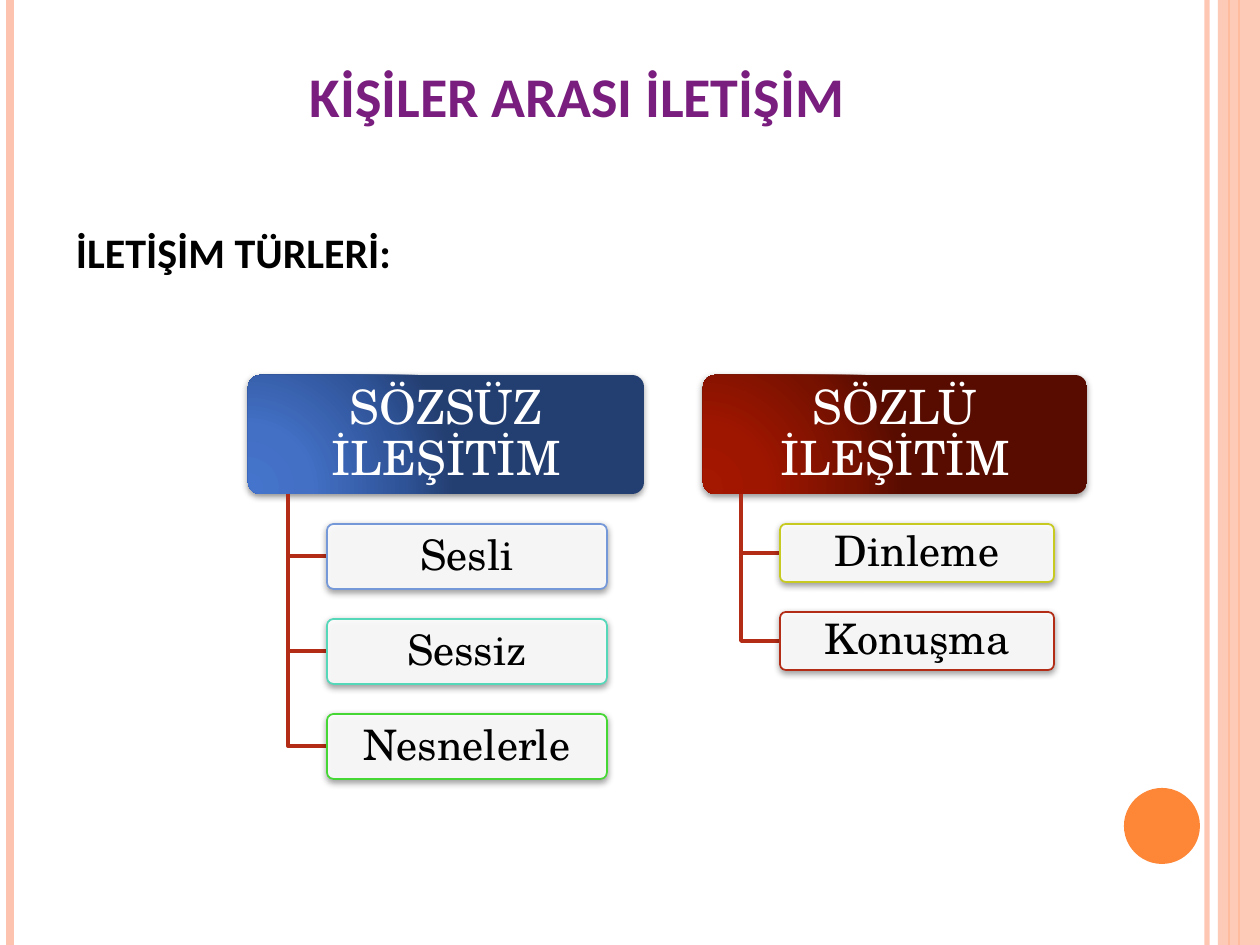
from lxml.etree import SubElement
from pptx import Presentation
from pptx.dml.color import RGBColor
from pptx.enum.shapes import MSO_CONNECTOR, MSO_SHAPE
from pptx.enum.text import MSO_ANCHOR, PP_ALIGN
from pptx.oxml import parse_xml
from pptx.oxml.ns import nsdecls, qn
from pptx.util import Pt

SCALE = 914400 // 126
WIDTH, HEIGHT = 1260, 945

PURPLE = RGBColor(0x79, 0x1D, 0x7E)
BLACK = RGBColor(0, 0, 0)
WHITE = RGBColor(255, 255, 255)
PEACH = RGBColor(0xFE, 0xC3, 0xAE)
ORANGE = RGBColor(0xFE, 0x86, 0x37)
RED = RGBColor(0xB3, 0x2C, 0x16)
PERIWINKLE = RGBColor(0x75, 0x98, 0xD9)
TURQUOISE = RGBColor(0x55, 0xD7, 0xBA)
GREEN = RGBColor(0x45, 0xD8, 0x34)
OLIVE = RGBColor(0xC7, 0xCA, 0x20)

HEADING = "KİŞİLER ARASI İLETİŞİM"
SUBHEADING = "İLETİŞİM TÜRLERİ:"
BRANCHES = [
    {"name": "SÖZSÜZ İLEŞİTİM", "left": 248, "width": 396,
     "leaf_width": 280, "leaf_height": 65,
     "gradient": ("4574CC", "4370C5", "2F5397", "233E70"),
     "leaves": [("Sesli", PERIWINKLE), ("Sessiz", TURQUOISE), ("Nesnelerle", GREEN)]},
    {"name": "SÖZLÜ İLEŞİTİM", "left": 703, "width": 384,
     "leaf_width": 274, "leaf_height": 58,
     "gradient": ("A41700", "9F1600", "771100", "580C00"),
     "leaves": [("Dinleme", OLIVE), ("Konuşma", RED)]},
]
BRANCH_TOP, BRANCH_HEIGHT, GAP = 375, 119, 30
GRADIENT_STOPS = (0, 30, 75, 100)
STRIPES = [(1207, PEACH, 3, 93), (10, PEACH, 4.5, 100),
           (1239, ORANGE, 1.5, 100), (1229, ORANGE, 0.75, 100)]
BAND = (1218, 0, 42, HEIGHT)
DISC = (1124, 788, 76, 76)


def px(*values):
    return [round(value * SCALE) for value in values]


def set_alpha(parent, percent):
    for color in parent.iter(qn("a:srgbClr")):
        SubElement(color, qn("a:alpha"), val=str(percent * 1000))


def write(frame, text, font, margins, anchor, align=None, **spacing):
    frame.text = text
    frame.word_wrap = True
    frame.vertical_anchor = anchor
    for side, margin in zip(("left", "top", "right", "bottom"), margins):
        setattr(frame, "margin_" + side, px(margin)[0])
    paragraph = frame.paragraphs[0]
    paragraph.alignment = align
    for key, value in spacing.items():
        setattr(paragraph, key, value)
    run = paragraph.runs[0]
    run.font.color.rgb = font["color"]
    for key in ("name", "size", "bold"):
        setattr(run.font, key, font[key])
    return paragraph


def fill_placeholder(holder, box, *args, **spacing):
    holder.left, holder.top, holder.width, holder.height = px(*box)
    return write(holder.text_frame, *args, **spacing)


def add_plain(kind, box, color):
    shape = slide.shapes.add_shape(kind, *px(*box))
    shape.shadow.inherit = False
    shape.fill.solid()
    shape.fill.fore_color.rgb = color
    shape.line.fill.background()
    return shape


def add_card(box, text, size, color, margins):
    card = add_plain(MSO_SHAPE.ROUNDED_RECTANGLE, box, WHITE)
    card.adjustments[0] = 0.1
    effects = card._element.spPr.find(qn("a:effectLst"))
    effects.append(parse_xml(
        f'<a:outerShdw {nsdecls("a")} blurRad="{Pt(4)}" dist="{Pt(1.6)}" dir="5400000" '
        'rotWithShape="0"><a:srgbClr val="000000"><a:alpha val="42000"/></a:srgbClr></a:outerShdw>'))
    font = {"name": "TeX Gyre Schola", "size": Pt(size), "bold": False, "color": color}
    write(card.text_frame, text, font, margins, MSO_ANCHOR.MIDDLE, PP_ALIGN.CENTER, line_spacing=0.9)
    return card


def set_radial_gradient(card, colors):
    stops = "".join(f'<a:gs pos="{stop * 1000}"><a:srgbClr val="{color}"/></a:gs>'
                    for stop, color in zip(GRADIENT_STOPS, colors))
    solid = card._element.spPr.find(qn("a:solidFill"))
    solid.getparent().replace(solid, parse_xml(
        f'<a:gradFill {nsdecls("a")} rotWithShape="1"><a:gsLst>{stops}</a:gsLst><a:path path="circle">'
        '<a:fillToRect l="5000" t="100000" r="120000" b="10000"/></a:path></a:gradFill>'))


def add_elbow(x, top, bottom, right):
    builder = slide.shapes.build_freeform(x, top, scale=SCALE)
    builder.add_line_segments([(x, bottom), (right, bottom)], close=False)
    elbow = builder.convert_to_shape()
    elbow.shadow.inherit = False
    elbow.fill.background()
    elbow.line.color.rgb = RED
    elbow.line.width = Pt(2)


presentation = Presentation()
presentation.slide_width, presentation.slide_height = px(WIDTH, HEIGHT)
slide = presentation.slides.add_slide(presentation.slide_layouts[1])
title, body = slide.placeholders

fill_placeholder(title, (63, 38, 1029, 157), HEADING,
                 {"name": "Calibri", "size": Pt(32), "bold": True, "color": PURPLE},
                 (13, 6, 13, 66), MSO_ANCHOR.BOTTOM, PP_ALIGN.CENTER)
types = fill_placeholder(body, (63, 220, 1029, 672), SUBHEADING,
                         {"name": "Calibri", "size": Pt(24), "bold": True, "color": BLACK},
                         (13, 6, 13, 6), MSO_ANCHOR.TOP, PP_ALIGN.LEFT, space_before=Pt(6))
types_format = types._p.get_or_add_pPr()
for key in ("marL", "indent"):
    types_format.set(key, "0")
SubElement(types_format, qn("a:buNone"))

for x, color, weight, opacity in STRIPES:
    stripe = slide.shapes.add_connector(MSO_CONNECTOR.STRAIGHT, *px(x, 0, x, HEIGHT))
    stripe.line.color.rgb = color
    stripe.line.width = Pt(weight)
    set_alpha(stripe.line._ln, opacity)
    SubElement(stripe._element.spPr, qn("a:effectLst"))
band = add_plain(MSO_SHAPE.RECTANGLE, BAND, PEACH)
set_alpha(band._element.spPr.find(qn("a:solidFill")), 87)
add_plain(MSO_SHAPE.OVAL, DISC, ORANGE)

for branch in BRANCHES:
    left, width = branch["left"], branch["width"]
    leaf_height = branch["leaf_height"]
    bottom = BRANCH_TOP + BRANCH_HEIGHT
    stem, leaf_left = left + round(width * 0.1), left + round(width * 0.2)
    header = add_card((left, BRANCH_TOP, width, BRANCH_HEIGHT), branch["name"], 27, WHITE, (8, 5, 8, 5))
    set_radial_gradient(header, branch["gradient"])
    for index, (leaf, outline) in enumerate(branch["leaves"]):
        top = bottom + GAP + index * (leaf_height + GAP)
        add_elbow(stem, bottom, top + leaf_height // 2, leaf_left)
        card = add_card((leaf_left, top, branch["leaf_width"], leaf_height), leaf, 24, BLACK, (6, 4, 6, 4))
        set_alpha(card._element.spPr.find(qn("a:solidFill")), 90)
        card.line.color.rgb = outline
        card.line.width = Pt(1)

presentation.save("out.pptx")
